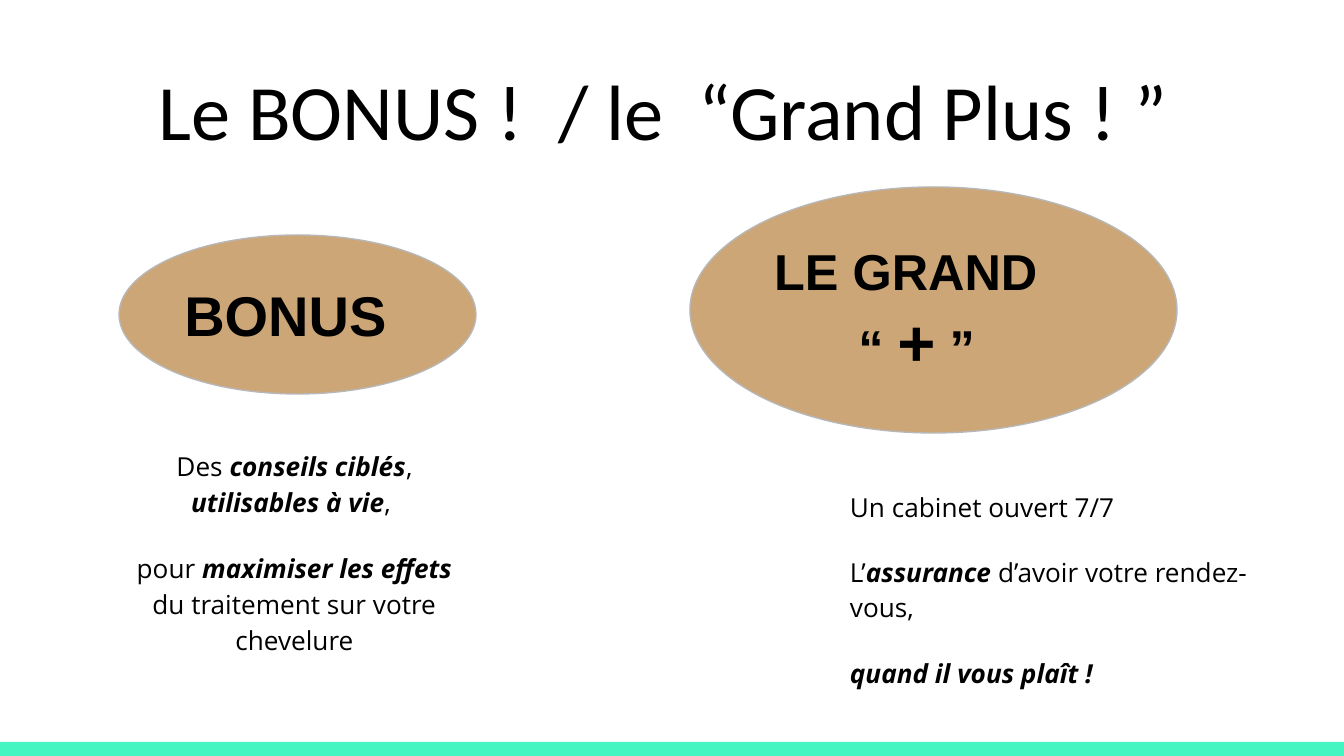
from dataclasses import dataclass

from pptx import Presentation
from pptx.dml.color import RGBColor
from pptx.enum.shapes import MSO_SHAPE
from pptx.enum.text import MSO_ANCHOR, MSO_AUTO_SIZE, PP_ALIGN
from pptx.slide import Slide
from pptx.text.text import TextFrame, _Paragraph
from pptx.util import Emu, Pt

EMU_PER_PX = 914400 / 134.4
INSET = 13
BLACK, TAN, GREY, MINT = "000000", "CCA677", "B7B7B7", "43F5C1"


@dataclass(frozen=True)
class Box:
    left: int
    top: int
    width: int
    height: int

    def lengths(self) -> list[Emu]:
        return [px(n) for n in (self.left, self.top, self.width, self.height)]


@dataclass(frozen=True)
class Run:
    text: str
    emphasis: bool = False
    size: int | None = None


@dataclass(frozen=True)
class Line:
    runs: tuple[Run, ...]
    indent: int = 0


@dataclass(frozen=True)
class Bubble:
    box: Box
    size: int
    lines: tuple[Line, ...]


@dataclass(frozen=True)
class Description:
    box: Box
    alignment: PP_ALIGN
    line_spacing: float
    lines: tuple[Line, ...]


BUBBLES = (
    Bubble(Box(119, 235, 357, 159), 30, (Line((Run("BONUS"),)),)),
    Bubble(Box(690, 187, 487, 246), 27, (
        Line((Run("LE GRAND"),)),
        Line((Run("“ "), Run("+", size=35), Run(" ”")), indent=84),
    )),
)
DESCRIPTIONS = (
    Description(Box(46, 433, 430, 239), PP_ALIGN.CENTER, 1.15, (
        Line((Run("Des "), Run("conseils ciblés", True), Run(", "),
              Run("utilisables à vie", True), Run(", ")), indent=67),
        Line((Run("pour "), Run("maximiser les effets ", True),
              Run("du traitement sur votre chevelure")), indent=67),
    )),
    Description(Box(837, 474, 441, 159), PP_ALIGN.LEFT, 1.13, (
        Line((Run("Un cabinet ouvert 7/7"),)),
        Line((Run("L’"), Run("assurance", True), Run(" d’avoir votre rendez-vous,"))),
        Line((Run("quand il vous plaît !", True),)),
    )),
)


def px(count: int) -> Emu:
    return Emu(round(count * EMU_PER_PX))


def color(value: str) -> RGBColor:
    return RGBColor.from_string(value)


def format_frame(frame: TextFrame, anchor: MSO_ANCHOR) -> None:
    frame.word_wrap = True
    frame.auto_size = MSO_AUTO_SIZE.NONE
    frame.vertical_anchor = anchor
    frame.margin_left = frame.margin_right = px(INSET)
    frame.margin_top = frame.margin_bottom = px(INSET)


def format_paragraph(paragraph: _Paragraph, font: str, size: int, alignment: PP_ALIGN) -> None:
    paragraph.alignment = alignment
    paragraph.font.name = font
    paragraph.font.size = Pt(size)
    paragraph.font.color.rgb = color(BLACK)


def write_lines(frame: TextFrame, lines: tuple[Line, ...], font: str, size: int,
                alignment: PP_ALIGN) -> None:
    for index, line in enumerate(lines):
        paragraph = frame.add_paragraph() if index else frame.paragraphs[0]
        format_paragraph(paragraph, font, size, alignment)
        if line.indent:
            properties = paragraph._p.get_or_add_pPr()
            properties.set("marL", str(px(line.indent)))
            properties.set("indent", "0")
        for part in line.runs:
            run = paragraph.add_run()
            run.text = part.text
            if part.emphasis:
                run.font.bold = run.font.italic = True
            if part.size:
                run.font.size = Pt(part.size)


def add_footer_bar(slide: Slide) -> None:
    bar = slide.shapes.add_shape(MSO_SHAPE.RECTANGLE, *Box(0, 742, 1344, 14).lengths())
    bar.shadow.inherit = False
    bar.fill.solid()
    bar.fill.fore_color.rgb = color(MINT)
    bar.line.fill.background()


def set_title(slide: Slide, text: str) -> None:
    title = slide.shapes.title
    title.left, title.top, title.width, title.height = Box(46, 47, 1252, 122).lengths()
    format_frame(title.text_frame, MSO_ANCHOR.BOTTOM)
    title.text_frame.text = text
    format_paragraph(title.text_frame.paragraphs[0], "Calibri", 42, PP_ALIGN.CENTER)


def add_bubble(slide: Slide, bubble: Bubble) -> None:
    ellipse = slide.shapes.add_shape(MSO_SHAPE.OVAL, *bubble.box.lengths())
    ellipse.shadow.inherit = False
    ellipse.fill.solid()
    ellipse.fill.fore_color.rgb = color(TAN)
    ellipse.line.color.rgb = color(GREY)
    ellipse.line.width = Pt(0.75)
    format_frame(ellipse.text_frame, MSO_ANCHOR.MIDDLE)
    write_lines(ellipse.text_frame, bubble.lines, "Arial", bubble.size, PP_ALIGN.LEFT)
    for paragraph in ellipse.text_frame.paragraphs:
        paragraph.font.bold = True


def add_description(slide: Slide, description: Description) -> None:
    frame = slide.shapes.add_textbox(*description.box.lengths()).text_frame
    format_frame(frame, MSO_ANCHOR.TOP)
    write_lines(frame, description.lines, "Open Sans", 14, description.alignment)
    for index, paragraph in enumerate(frame.paragraphs):
        paragraph.line_spacing = description.line_spacing
        paragraph.space_before = Pt(16 if index else 0)


def main() -> None:
    presentation = Presentation()
    presentation.slide_width, presentation.slide_height = px(1344), px(756)
    slide = presentation.slides.add_slide(presentation.slide_layouts[5])
    add_footer_bar(slide)
    set_title(slide, "Le BONUS !  / le  “Grand Plus ! ” ")
    for description in DESCRIPTIONS:
        add_description(slide, description)
    for bubble in BUBBLES:
        add_bubble(slide, bubble)
    presentation.save("out.pptx")


if __name__ == "__main__":
    main()
